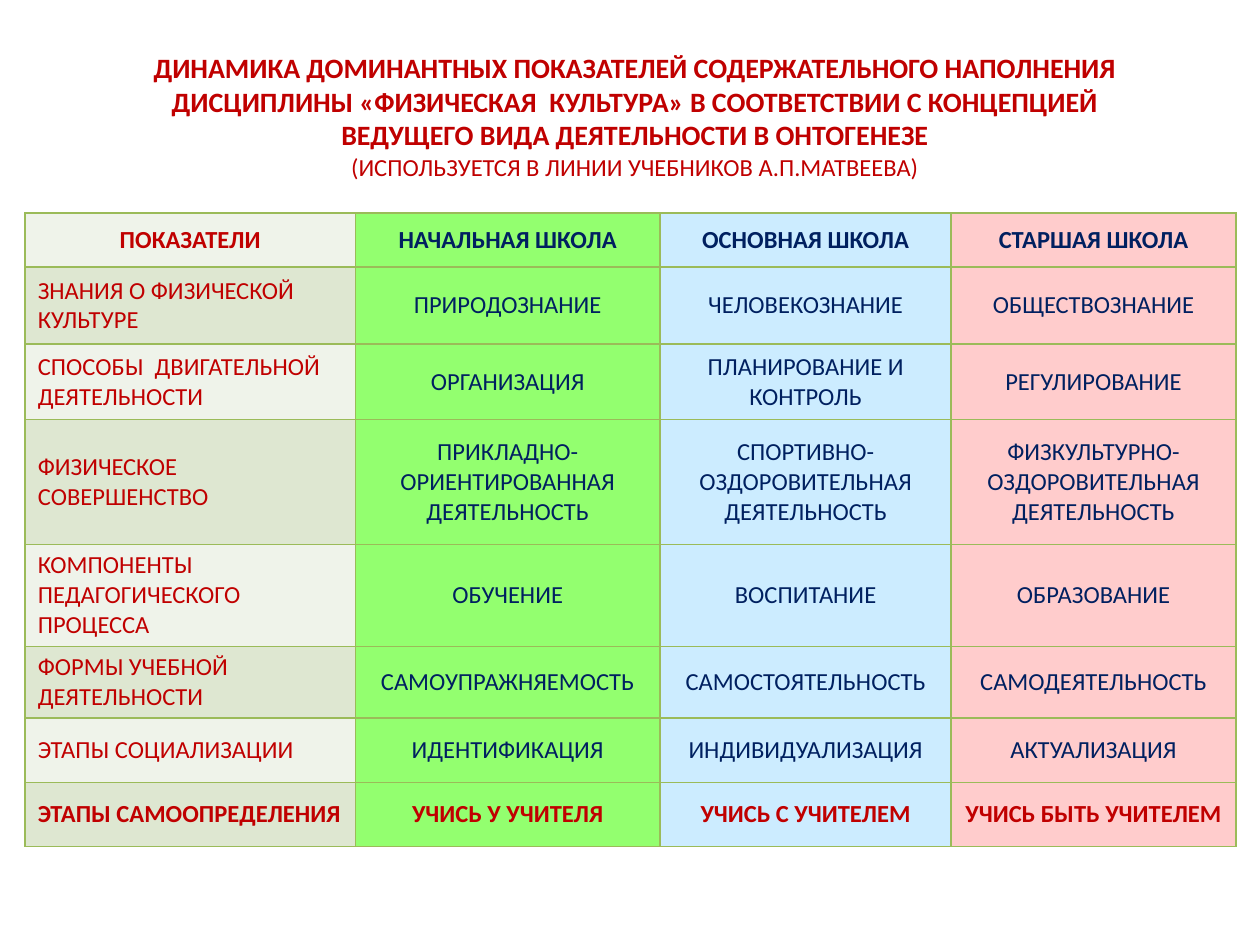
from lxml.etree import SubElement
from pptx import Presentation
from pptx.dml.color import RGBColor
from pptx.enum.text import MSO_ANCHOR, PP_ALIGN
from pptx.oxml.ns import qn
from pptx.util import Inches, Pt

RED, NAVY, LINE = "C00000", "002060", "9BBB59"
BANDS = ["EFF3EA", "DEE7D1"]
GREEN, BLUE, PINK = "66FF33", "CCECFF", "FFCCCC"
COLS = [26.2, 24.2, 23.1, 22.6]
ROWS = [4.3, 6.1, 6, 9.9, 8.1, 5.7, 5.1, 5.1]
TITLE = [
    ("ДИНАМИКА ДОМИНАНТНЫХ ПОКАЗАТЕЛЕЙ СОДЕРЖАТЕЛЬНОГО НАПОЛНЕНИЯ "
     "ДИСЦИПЛИНЫ «ФИЗИЧЕСКАЯ  КУЛЬТУРА» В СООТВЕТСТВИИ С КОНЦЕПЦИЕЙ\v"
     "ВЕДУЩЕГО ВИДА ДЕЯТЕЛЬНОСТИ В ОНТОГЕНЕЗЕ", 16, True),
    ("(ИСПОЛЬЗУЕТСЯ В ЛИНИИ УЧЕБНИКОВ А.П.МАТВЕЕВА)", 14, False),
]
DATA = [
    ["ПОКАЗАТЕЛИ", "НАЧАЛЬНАЯ ШКОЛА", "ОСНОВНАЯ ШКОЛА", "СТАРШАЯ ШКОЛА"],
    ["ЗНАНИЯ О ФИЗИЧЕСКОЙ КУЛЬТУРЕ", "ПРИРОДОЗНАНИЕ", "ЧЕЛОВЕКОЗНАНИЕ",
     "ОБЩЕСТВОЗНАНИЕ"],
    ["СПОСОБЫ  ДВИГАТЕЛЬНОЙ ДЕЯТЕЛЬНОСТИ", "ОРГАНИЗАЦИЯ",
     "ПЛАНИРОВАНИЕ И КОНТРОЛЬ", "РЕГУЛИРОВАНИЕ"],
    ["ФИЗИЧЕСКОЕ СОВЕРШЕНСТВО", "ПРИКЛАДНО-ОРИЕНТИРОВАННАЯ ДЕЯТЕЛЬНОСТЬ",
     "СПОРТИВНО-ОЗДОРОВИТЕЛЬНАЯ ДЕЯТЕЛЬНОСТЬ",
     "ФИЗКУЛЬТУРНО-ОЗДОРОВИТЕЛЬНАЯ ДЕЯТЕЛЬНОСТЬ"],
    ["КОМПОНЕНТЫ ПЕДАГОГИЧЕСКОГО ПРОЦЕССА", "ОБУЧЕНИЕ", "ВОСПИТАНИЕ",
     "ОБРАЗОВАНИЕ"],
    ["ФОРМЫ УЧЕБНОЙ ДЕЯТЕЛЬНОСТИ", "САМОУПРАЖНЯЕМОСТЬ", "САМОСТОЯТЕЛЬНОСТЬ",
     "САМОДЕЯТЕЛЬНОСТЬ"],
    ["ЭТАПЫ СОЦИАЛИЗАЦИИ", "ИДЕНТИФИКАЦИЯ", "ИНДИВИДУАЛИЗАЦИЯ",
     "АКТУАЛИЗАЦИЯ"],
    ["ЭТАПЫ САМООПРЕДЕЛЕНИЯ", "УЧИСЬ У УЧИТЕЛЯ", "УЧИСЬ С УЧИТЕЛЕМ",
     "УЧИСЬ БЫТЬ УЧИТЕЛЕМ"],
]


def paint(hue):
    """Turn a hex string into a colour."""
    return RGBColor.from_string(hue)


def unit(num):
    """Turn steps of the 100 by 75 slide grid into a length."""
    return Inches(num / 10)


class Deck:
    """Hold the style and the current slide."""

    def __init__(self, face="Calibri"):
        """Open a deck with one blank slide."""
        self.face = face
        self.show = Presentation()
        self.show.slide_width, self.show.slide_height = unit(100), unit(75)
        self.slide = self.show.slides.add_slide(self.show.slide_layouts[6])

    def label(self, para, text, size, hue, bold, align):
        """Fill one paragraph with styled text."""
        para.text, para.alignment = text, align
        font = para.font
        font.name, font.size, font.bold = self.face, Pt(size), bold
        font.color.rgb = paint(hue)

    def title(self, items, *box):
        """Add a centred text box with one paragraph per item."""
        frame = self.slide.shapes.add_textbox(*map(unit, box)).text_frame
        frame.word_wrap, frame.vertical_anchor = True, MSO_ANCHOR.MIDDLE
        for num, (text, size, bold) in enumerate(items):
            para = frame.add_paragraph() if num else frame.paragraphs[0]
            self.label(para, text, size, RED, bold, PP_ALIGN.CENTER)

    def cell(self, cell, text, fill, hue, bold, align, alpha=None):
        """Style one table cell: border, fill and text."""
        props = cell._tc.get_or_add_tcPr()
        for side in ("lnL", "lnR", "lnT", "lnB"):
            edge = SubElement(props, qn("a:" + side), w=str(Pt(1)))
            ink = SubElement(edge, qn("a:solidFill"))
            SubElement(ink, qn("a:srgbClr"), val=LINE)
        cell.fill.solid()
        cell.fill.fore_color.rgb = paint(fill)
        if alpha:
            tint = props.find(qn("a:solidFill")).find(qn("a:srgbClr"))
            SubElement(tint, qn("a:alpha"), val=str(alpha * 1000))
        cell.vertical_anchor = MSO_ANCHOR.MIDDLE
        self.label(cell.text_frame.paragraphs[0], text, 14, hue, bold, align)

    def table(self, data, cols, rows, left, top):
        """Add the table of indicators by school stage."""
        box = map(unit, (left, top, sum(cols), sum(rows)))
        table = self.slide.shapes.add_table(len(rows), len(cols), *box).table
        table.first_row = table.horz_banding = False
        for col, wide in zip(table.columns, cols):
            col.width = unit(wide)
        last = len(rows) - 1
        for r, (row, tall) in enumerate(zip(data, rows)):
            table.rows[r].height = unit(tall)
            fills = [BANDS[r % 2], GREEN, BLUE, PINK]
            for c, (text, fill) in enumerate(zip(row, fills)):
                hue = RED if c == 0 or r == last else NAVY
                align = PP_ALIGN.LEFT if c == 0 and r else PP_ALIGN.CENTER
                self.cell(table.cell(r, c), text, fill, hue, r in (0, last),
                          align, 70 if fill == GREEN else None)


def main():
    """Build the slide and save it."""
    deck = Deck()
    deck.title(TITLE, 5.1, 2.9, 90.6, 12.6)
    deck.table(DATA, COLS, ROWS, 2, 16.9)
    deck.show.save("out.pptx")


if __name__ == "__main__":
    main()
